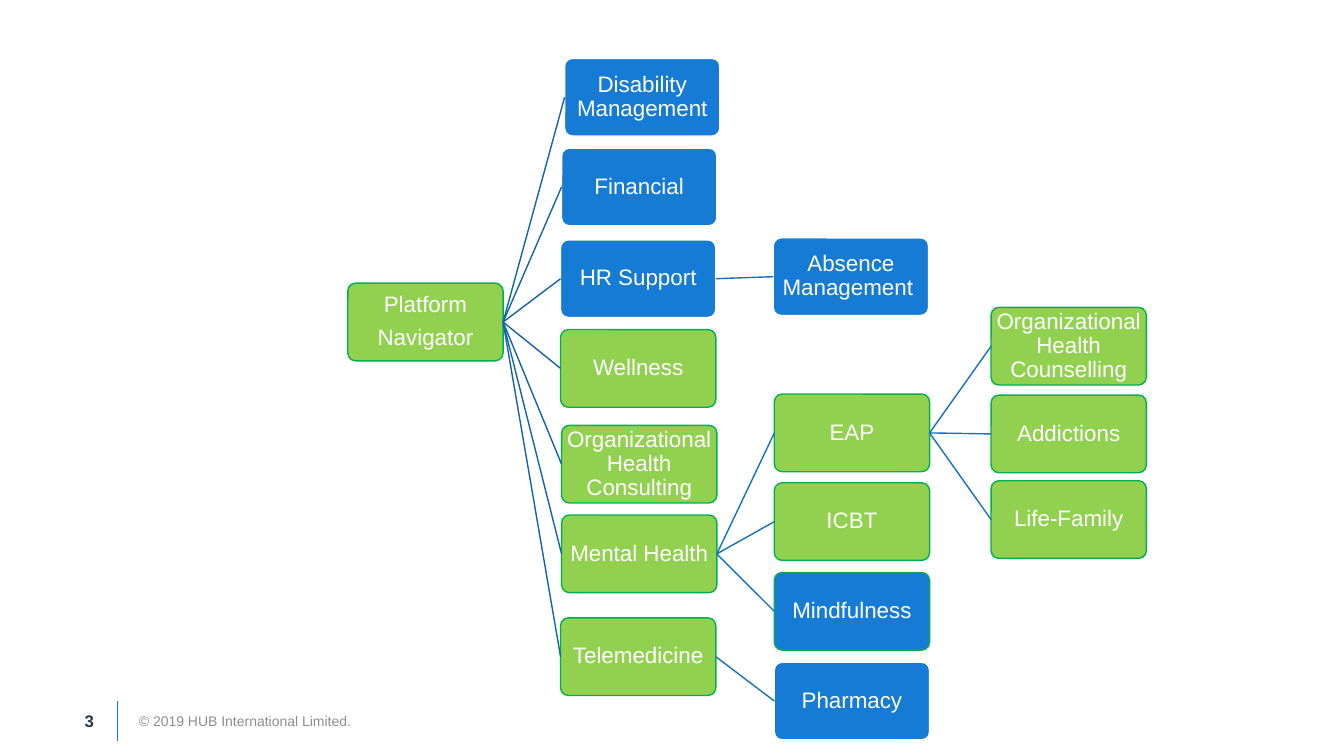
"""Build the platform navigator tree slide."""
from lxml import etree
from pptx import Presentation
from pptx.dml.color import RGBColor
from pptx.enum.shapes import MSO_CONNECTOR, MSO_SHAPE
from pptx.enum.text import MSO_ANCHOR, PP_ALIGN
from pptx.oxml.ns import qn
from pptx.util import Inches, Pt

STRAIGHT = MSO_CONNECTOR.STRAIGHT
ROUNDED = MSO_SHAPE.ROUNDED_RECTANGLE
MIDDLE = MSO_ANCHOR.MIDDLE
CENTER = PP_ALIGN.CENTER
LEFT = PP_ALIGN.LEFT
LEFT_SITE, RIGHT_SITE = 1, 3

WHITE = RGBColor(0xFF, 0xFF, 0xFF)
GREEN = RGBColor(0x92, 0xD0, 0x50)
GREEN_EDGE = RGBColor(0x00, 0xB0, 0x50)
BLUE = RGBColor(0x16, 0x7B, 0xD4)
ROOT_LINK = RGBColor(0x12, 0x63, 0xAA)
BRANCH_LINK = RGBColor(0x14, 0x70, 0xC0)
FOOTER_RULE = RGBColor(0x06, 0x78, 0xD5)
FOOTER_GRAY = RGBColor(0x8D, 0x8D, 0x94)
NAVY = RGBColor(0x26, 0x37, 0x46)

BOX_WIDTH, BOX_HEIGHT = 1.54, 0.77
ROOT = "Platform\nNavigator"
NODES = [
    (ROOT, None, 3.45, 2.81, GREEN, GREEN_EDGE),
    ("Disability Management", ROOT, 5.6, 0.58, BLUE, WHITE),
    ("Financial", ROOT, 5.57, 1.47, BLUE, WHITE),
    ("HR Support", ROOT, 5.56, 2.38, BLUE, WHITE),
    ("Absence Management ", "HR Support", 7.67, 2.36, BLUE, WHITE),
    ("Wellness", ROOT, 5.56, 3.27, GREEN, GREEN_EDGE),
    ("Organizational Health Consulting", ROOT, 5.57, 4.22, GREEN, GREEN_EDGE),
    ("Mental Health", ROOT, 5.57, 5.11, GREEN, GREEN_EDGE),
    ("EAP", "Mental Health", 7.68, 3.91, GREEN, GREEN_EDGE),
    ("Organizational Health Counselling", "EAP", 9.83, 3.05, GREEN, GREEN_EDGE),
    ("Addictions", "EAP", 9.83, 3.92, GREEN, GREEN_EDGE),
    ("Life-Family", "EAP", 9.83, 4.77, GREEN, GREEN_EDGE),
    ("ICBT", "Mental Health", 7.68, 4.79, GREEN, GREEN_EDGE),
    ("Mindfulness", "Mental Health", 7.68, 5.68, BLUE, GREEN_EDGE),
    ("Telemedicine", ROOT, 5.56, 6.13, GREEN, GREEN_EDGE),
    ("Pharmacy", "Telemedicine", 7.68, 6.57, BLUE, WHITE),
]


def add_line(start, end, color, width):
    """Add a straight line without a shadow."""
    points = [Inches(value) for value in (*start, *end)]
    connector = slide.shapes.add_connector(STRAIGHT, *points)
    connector.line.color.rgb = color
    connector.line.width = Pt(width)
    etree.SubElement(connector.element.spPr, qn("a:effectLst"))
    return connector


def add_text(paragraph, text, size, color, bold=False):
    """Add one formatted run to a paragraph."""
    run = paragraph.add_run()
    run.text = text
    run.font.name = "Arial"
    run.font.size = Pt(size)
    run.font.bold = bold
    run.font.color.rgb = color


presentation = Presentation()
presentation.slide_width = Inches(13.33)
presentation.slide_height = Inches(7.5)
slide = presentation.slides.add_slide(presentation.slide_layouts[6])

add_line((1.16, 6.95), (1.16, 7.35), FOOTER_RULE, 0.5)
for text, left, width, size, color, bold in [
    ("© 2019 HUB International Limited.", 1.28, 4.5, 10, FOOTER_GRAY, False),
    ("3", 0.74, 0.51, 12, NAVY, True),
]:
    footer = slide.shapes.add_textbox(Inches(left), Inches(6.95), Inches(width), Inches(0.4))
    frame = footer.text_frame
    frame.word_wrap = True
    frame.vertical_anchor = MIDDLE
    frame.paragraphs[0].alignment = LEFT
    add_text(frame.paragraphs[0], text, size, color, bold)

boxes = {}
for label, parent, left, top, fill, edge in NODES:
    box = slide.shapes.add_shape(
        ROUNDED, Inches(left), Inches(top), Inches(BOX_WIDTH), Inches(BOX_HEIGHT))
    boxes[label] = box
    box.shadow.inherit = False
    box.adjustments[0] = 0.1
    box.fill.solid()
    box.fill.fore_color.rgb = fill
    box.line.color.rgb = edge
    box.line.width = Pt(1)

    frame = box.text_frame
    frame.word_wrap = True
    frame.vertical_anchor = MIDDLE
    frame.margin_left = frame.margin_right = Inches(0.01)
    frame.margin_top = frame.margin_bottom = Inches(0.01)
    for index, text in enumerate(label.split("\n")):
        paragraph = frame.add_paragraph() if index else frame.paragraphs[0]
        paragraph.alignment = CENTER
        paragraph.line_spacing = 0.9
        paragraph.space_after = Pt(6)
        add_text(paragraph, text, 16, WHITE)

    if parent:
        color = ROOT_LINK if parent == ROOT else BRANCH_LINK
        link = add_line((left, top), (left, top), color, 1)
        link.begin_connect(boxes[parent], RIGHT_SITE)
        link.end_connect(box, LEFT_SITE)

presentation.save("out.pptx")
